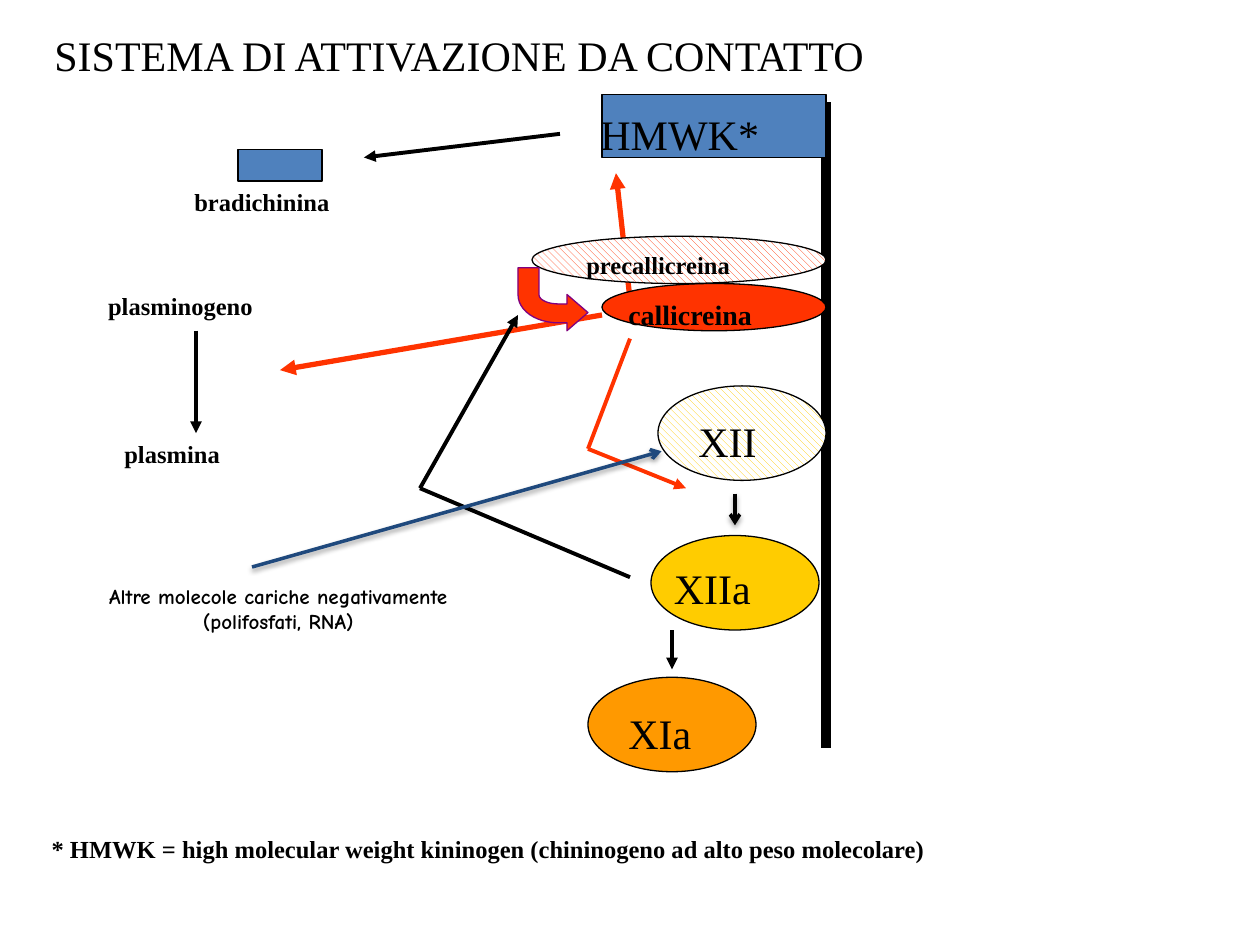
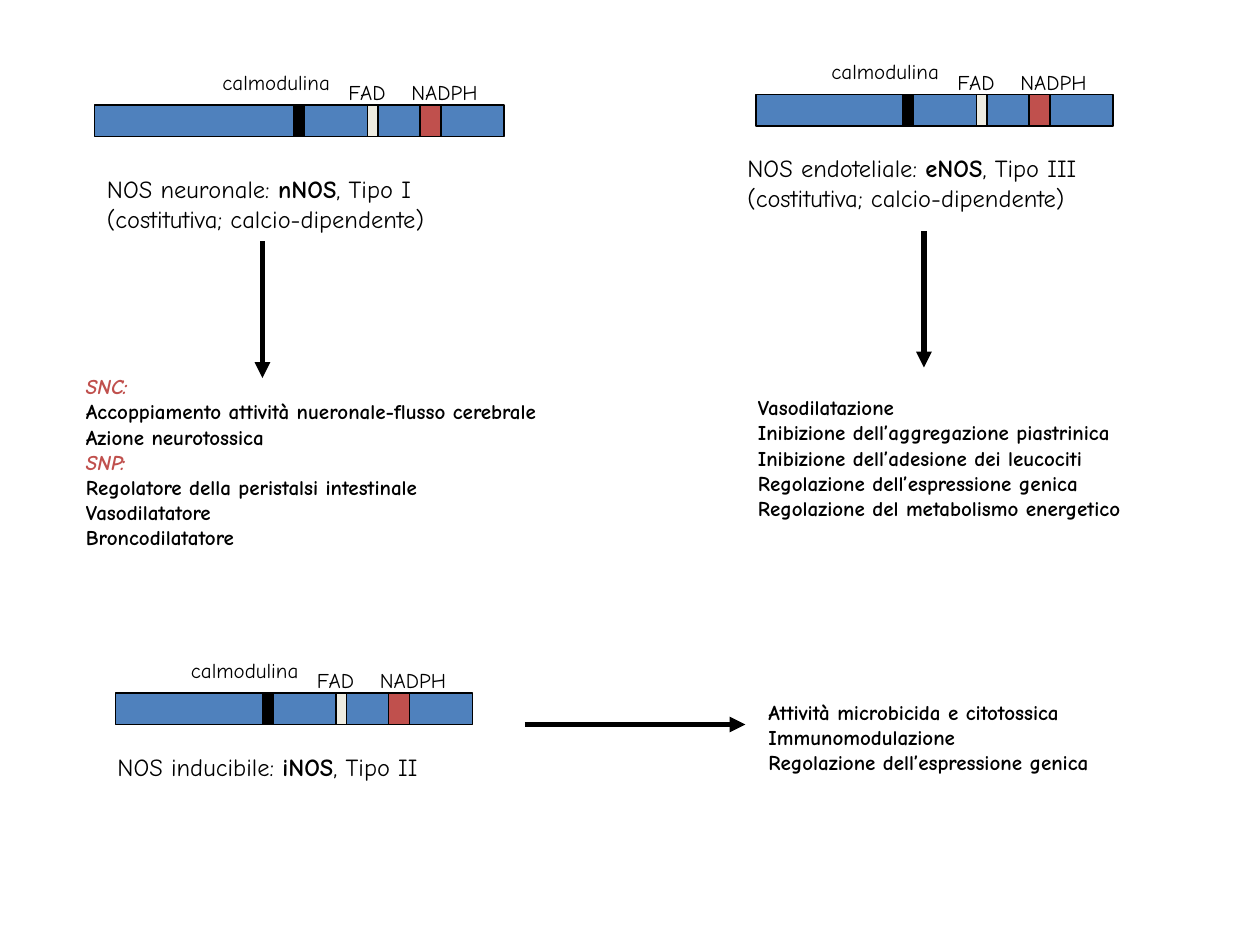
from dataclasses import dataclass, replace

from lxml.etree import SubElement
from pptx import Presentation
from pptx.dml.color import RGBColor
from pptx.enum.dml import MSO_PATTERN
from pptx.enum.shapes import MSO_CONNECTOR, MSO_SHAPE
from pptx.enum.text import MSO_AUTO_SIZE, PP_ALIGN
from pptx.oxml.ns import qn
from pptx.util import Inches, Pt


@dataclass(frozen=True)
class Style:
    font: str
    size: int
    bold: bool = False
    italic: bool = False
    color: str = "000000"
    padding: float = 0.1
    leading: float = 1.2


@dataclass(frozen=True)
class Theme:
    black: str = "000000"
    white: str = "FFFFFF"
    blue: str = "4F81BD"
    navy: str = "1F497D"
    cream: str = "EEECE1"
    brick: str = "C0504D"
    red: str = "FF3300"
    orange: str = "FF9900"
    yellow: str = "FFCC00"
    purple: str = "800080"
    outline: float = 0.75
    title: Style = Style("Times New Roman", 24, padding=0, leading=1.15)
    large_label: Style = Style("Times New Roman", 16, True, padding=0, leading=1.15)
    label: Style = Style("Times New Roman", 14, True, padding=0, leading=1.15)
    heading: Style = Style("Comic Neue", 14)
    domain: Style = Style("Comic Neue", 12)
    note: Style = Style("Comic Neue", 12, True)


THEME = Theme()


class Canvas:
    def __init__(self, theme):
        self.theme = theme
        self.deck = Presentation()
        self.deck.slide_width, self.deck.slide_height = Inches(10), Inches(7.5)

    def new_page(self, columns, rows):
        self.page = self.deck.slides.add_slide(self.deck.slide_layouts[6])
        self.shapes = self.page.shapes
        self.column = self.deck.slide_width / columns
        self.row = self.deck.slide_height / rows

    def start_group(self):
        self.shapes = self.page.shapes.add_group_shape().shapes

    def end_group(self):
        self.shapes = self.page.shapes

    def place(self, column, row):
        return round(column * self.column), round(row * self.row)

    def paint(self, shape, fill, line, hatched=False):
        shape.shadow.inherit = False
        if hatched:
            shape.fill.patterned()
            shape.fill.pattern = MSO_PATTERN.WIDE_DOWNWARD_DIAGONAL
            shape.fill.fore_color.rgb = RGBColor.from_string(fill)
            shape.fill.back_color.rgb = RGBColor.from_string(self.theme.white)
        else:
            shape.fill.solid()
            shape.fill.fore_color.rgb = RGBColor.from_string(fill)
        shape.line.color.rgb = RGBColor.from_string(line)
        shape.line.width = Pt(self.theme.outline)

    def preset(self, kind, column, row, columns, rows, fill, hatched=False):
        shape = self.shapes.add_shape(kind, *self.place(column, row), *self.place(columns, rows))
        self.paint(shape, fill, self.theme.black, hatched)

    def rectangle(self, *geometry_and_fill):
        self.preset(MSO_SHAPE.RECTANGLE, *geometry_and_fill)

    def ellipse(self, *geometry_and_fill, hatched=False):
        self.preset(MSO_SHAPE.OVAL, *geometry_and_fill, hatched=hatched)

    def outline(self, points, fill, line):
        start, *others = [self.place(*point) for point in points]
        builder = self.shapes.build_freeform(*start)
        builder.add_line_segments(others, close=True)
        self.paint(builder.convert_to_shape(), fill, line)

    def line(self, start, end, color, width, head=None, shadow=False):
        connector = self.shapes.add_connector(
            MSO_CONNECTOR.STRAIGHT, *self.place(*start), *self.place(*end))
        connector.line.color.rgb = RGBColor.from_string(color)
        connector.line.width = Pt(width)
        properties = connector._element.spPr
        if head:
            SubElement(properties.find(qn("a:ln")), qn("a:tailEnd"), type=head)
        effects = SubElement(properties, qn("a:effectLst"))
        if shadow:
            cast = SubElement(effects, qn("a:outerShdw"), blurRad=str(Pt(3.1)),
                              dist=str(Pt(1.6)), dir="5400000", rotWithShape="0")
            tint = SubElement(cast, qn("a:srgbClr"), val=self.theme.black)
            SubElement(tint, qn("a:alpha"), val="38000")

    def arrow(self, start, end, color, width):
        self.line(start, end, color, width, "triangle")

    def format(self, span, style):
        span.font.name = style.font
        span.font.size = Pt(style.size)
        span.font.bold = style.bold
        span.font.italic = style.italic
        span.font.color.rgb = RGBColor.from_string(style.color)

    def text(self, column, row, columns, lines, style, align=PP_ALIGN.LEFT, line_count=None):
        count = line_count or len(lines)
        height = Inches(count * style.size * style.leading / 72 + style.padding)
        box = self.shapes.add_textbox(
            *self.place(column, row), round(columns * self.column), height)
        frame = box.text_frame
        frame.word_wrap = False
        frame.auto_size = MSO_AUTO_SIZE.SHAPE_TO_FIT_TEXT
        frame.text = "\n".join(lines)
        for para in frame.paragraphs:
            para.alignment = align
            for span in para.runs:
                self.format(span, style)
        return frame

    def extend(self, para, content, style):
        span = para.add_run()
        span.text = content
        self.format(span, style)


def bezier(start, first, second, end, steps=12):
    for step in range(steps + 1):
        t = step / steps
        weights = ((1 - t) ** 3, 3 * t * (1 - t) ** 2, 3 * t * t * (1 - t), t ** 3)
        yield tuple(sum(weight * point[axis] for weight, point
                        in zip(weights, (start, first, second, end))) for axis in (0, 1))


def draw_contact_system(canvas):
    theme = canvas.theme
    canvas.new_page(90, 120)
    canvas.arrow((43, 40), (20, 47), theme.red, 3)
    canvas.arrow((45, 38), (44, 22), theme.red, 3)
    canvas.line((59, 13), (59, 95), theme.black, 6)
    canvas.rectangle(43, 12, 16, 8, theme.blue)

    canvas.ellipse(42, 86, 12, 12, theme.orange)
    canvas.text(44, 89, 8.5, ["XIa"], theme.title)
    canvas.ellipse(46.5, 68, 12, 12, theme.yellow)
    canvas.text(47.25, 70.7, 9.75, ["XIIa"], theme.title)
    canvas.arrow((48, 80), (48, 85), theme.black, 2.25)
    canvas.ellipse(47, 49, 12, 12, theme.yellow, hatched=True)
    canvas.text(49, 52, 8, ["XII"], theme.title)

    canvas.ellipse(43, 36, 16, 6, theme.red)
    canvas.ellipse(38, 30, 21, 6, theme.red, hatched=True)
    canvas.text(41, 31, 16.2, ["precallicreina"], theme.label)
    canvas.text(44, 37, 14.3, ["callicreina"], theme.large_label)
    canvas.line((45, 43), (42, 57), theme.red, 2.25)
    canvas.arrow((42, 57), (49, 62), theme.red, 2.25)

    outer_bend = bezier((39.9, 41), (38.25, 41), (37, 39.4), (37, 37.4))
    inner_bend = bezier((38.5, 37.4), (38.5, 38.1), (39.15, 38.6), (39.9, 38.6))
    bent_arrow = [(42, 39.7), (40.5, 42), (40.5, 41), *outer_bend, (37, 34), (38.5, 34),
                  *inner_bend, (40.5, 38.6), (40.5, 37.4)]
    canvas.outline(bent_arrow, theme.red, theme.purple)
    canvas.line((45, 73.3), (30, 62), theme.black, 2.25)
    canvas.arrow((30, 62), (37, 40), theme.black, 2.25)

    canvas.text(42, 13, 17.5, ["HMWK*"], theme.title)
    canvas.text(2.8, 105.1, 85.4, [
        "* HMWK = high molecular weight kininogen (chininogeno ad alto peso molecolare)",
    ], theme.label)
    canvas.arrow((40, 17), (26, 20), theme.black, 2.25)
    canvas.rectangle(17, 19, 6, 4, theme.blue)
    canvas.text(13, 23, 15.2, ["bradichinina"], theme.label)
    canvas.text(6.84, 36.2, 16.1, ["plasminogeno"], theme.label)
    canvas.text(8, 55, 11.5, ["plasmina"], theme.label)
    canvas.arrow((14, 42), (14, 55), theme.black, 2.25)
    canvas.text(3, 3, 82, ["SISTEMA DI ATTIVAZIONE DA CONTATTO"], theme.title)

    canvas.line((18, 72), (47.25, 57.3), theme.navy, 2, "arrow", shadow=True)
    canvas.text(5.22, 73.3, 29.34, [
        "Altre molecole cariche negativamente",
        "(polifosfati, RNA)",
    ], theme.note, PP_ALIGN.CENTER)
    canvas.line((52.5, 62.7), (52.5, 66.7), theme.black, 2, "arrow", shadow=True)


def draw_enzyme_bar(canvas, left, right, top):
    theme = canvas.theme
    canvas.start_group()
    canvas.rectangle(left, top, right - left, 3, theme.blue)
    for offset, width, fill in ((20, 1, theme.black), (13, 1, theme.cream), (8, 2, theme.brick)):
        canvas.rectangle(right - offset, top, width, 3, fill)
    for offset, rise, width, name in (
            (28, 4, 13, "calmodulina"), (16, 3, 6.5, "FAD"), (10, 3, 9.5, "NADPH")):
        canvas.text(right - offset, top - rise, width, [name], theme.domain)
    canvas.end_group()


def draw_enzyme_name(canvas, column, row, columns, spans, details=()):
    style = canvas.theme.heading
    kind, name, number = spans
    frame = canvas.text(column, row, columns, [kind, *details], style, line_count=2)
    first = frame.paragraphs[0]
    canvas.extend(first, name, replace(style, bold=True))
    canvas.extend(first, number, style)


def draw_nitric_oxide_synthases(canvas):
    theme = canvas.theme
    canvas.new_page(120, 90)
    constitutive = ["(costitutiva; calcio-dipendente)"]

    draw_enzyme_bar(canvas, 9, 48, 10)
    draw_enzyme_name(canvas, 9, 16, 36.4, ("NOS neuronale: ", "nNOS", ", Tipo I"), constitutive)
    neuronal = canvas.text(7, 35, 51.2, [
        "SNC:",
        "Accoppiamento attività nueronale-flusso cerebrale",
        "Azione neurotossica",
        "SNP:",
        "Regolatore della peristalsi intestinale",
        "Vasodilatatore",
        "Broncodilatatore",
    ], theme.note)
    for para in neuronal.paragraphs:
        if para.text.endswith(":"):
            canvas.format(para.runs[0], replace(theme.note, italic=True, color=theme.brick))

    draw_enzyme_bar(canvas, 72, 106, 9)
    draw_enzyme_name(canvas, 70, 14, 38.9, ("NOS endoteliale: ", "eNOS", ", Tipo III"), constitutive)
    canvas.text(71, 37, 40.6, [
        "Vasodilatazione",
        "Inibizione dell’aggregazione piastrinica",
        "Inibizione dell’adesione dei leucociti",
        "Regolazione dell’espressione genica",
        "Regolazione del metabolismo energetico",
    ], theme.note)

    draw_enzyme_bar(canvas, 11, 45, 66)
    draw_enzyme_name(canvas, 10, 71, 35.4, ("NOS inducibile: ", "iNOS", ", Tipo II"))
    canvas.text(72, 66, 35.9, [
        "Attività microbicida e citotossica",
        "Immunomodulazione",
        "Regolazione dell’espressione genica",
    ], theme.note)

    for start, end in (((25, 23), (25, 36)), ((88, 22), (88, 35)), ((50, 69), (71, 69))):
        canvas.arrow(start, end, theme.black, 3)


def main():
    canvas = Canvas(THEME)
    draw_contact_system(canvas)
    draw_nitric_oxide_synthases(canvas)
    canvas.deck.save("out.pptx")


if __name__ == "__main__":
    main()
